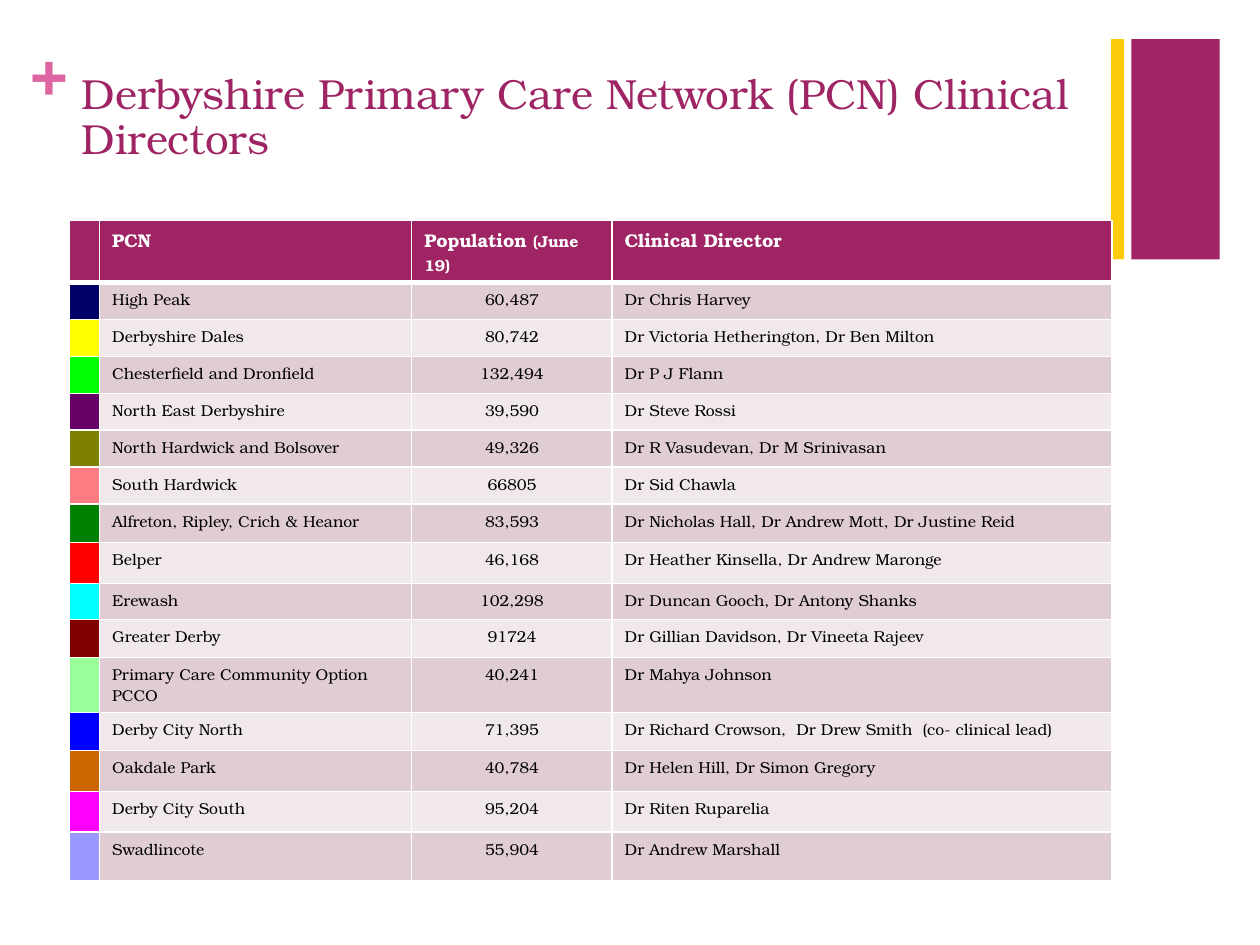
from lxml import etree
from pptx import Presentation, util as u
from pptx.dml.color import RGBColor
from pptx.enum import shapes, text
from pptx.oxml import ns

Pt = u.Pt
PLUM = RGBColor(0x9F, 0x24, 0x63)
PINK = RGBColor(0xDC, 0x65, 0xA2)
GOLD = RGBColor(0xFC, 0xCC, 0x0B)
WHITE = RGBColor(0xFF, 0xFF, 0xFF)
BLACK = RGBColor(0, 0, 0)
BANDS = (RGBColor(0xDF, 0xCD, 0xD3), RGBColor(0xF0, 0xE8, 0xEA))

HEADER = ("PCN", "Population ", "Clinical Director")
# swatch colour, network, population, directors, row height
NETWORKS = [
    ("000066", "High Peak", "60,487", "Dr Chris Harvey", 21.1),
    ("FFFF00", "Derbyshire Dales", "80,742", "Dr Victoria Hetherington, Dr Ben Milton", 21.1),
    ("00FF00", "Chesterfield and Dronfield", "132,494", "Dr P J Flann", 21.1),
    ("660066", "North East Derbyshire", "39,590", "Dr Steve Rossi", 21.1),
    ("808000", "North Hardwick and Bolsover", "49,326", "Dr R Vasudevan, Dr M Srinivasan", 21.1),
    ("FF7C80", "South Hardwick", "66805", "Dr Sid Chawla", 21.1),
    ("008000", "Alfreton, Ripley, Crich & Heanor", "83,593",
     "Dr Nicholas Hall, Dr Andrew Mott, Dr Justine Reid", 22),
    ("FF0000", "Belper", "46,168", "Dr Heather Kinsella, Dr Andrew Maronge", 23.4),
    ("00FFFF", "Erewash", "102,298", "Dr Duncan Gooch, Dr Antony Shanks", 20.6),
    ("800000", "Greater Derby", "91724", "Dr Gillian Davidson, Dr Vineeta Rajeev", 21.7),
    ("99FF99", "Primary Care Community Option PCCO", "40,241", "Dr Mahya Johnson", 31.4),
    ("0000FF", "Derby City North", "71,395",
     "Dr Richard Crowson,  Dr Drew Smith  (co- clinical lead)", 21.7),
    ("CC6600", "Oakdale Park", "40,784", "Dr Helen Hill, Dr Simon Gregory", 23.6),
    ("FF00FF", "Derby City South", "95,204", "Dr Riten Ruparelia", 23.2),
    ("9999FF", "Swadlincote", "55,904", "Dr Andrew Marshall", 27.6),
]
COLUMNS = (17.3, 178.4, 114.5, 285.7)
HEADER_HEIGHT = 35.5


class Deck:
    """Holds the style and the current slide."""
    font = "TeX Gyre Bonum"

    def __init__(self, prs):
        self.s = prs.slides.add_slide(prs.slide_layouts[6])

    def style(self, r, size, color, bold=False):
        r.font.name = self.font
        r.font.size = Pt(size)
        r.font.bold = bold
        r.font.color.rgb = color

    def bar(self, x, y, w, h, color):
        sp = self.s.shapes.add_shape(shapes.MSO_SHAPE.RECTANGLE, Pt(x), Pt(y), Pt(w), Pt(h))
        sp.shadow.inherit = False
        sp.fill.solid()
        sp.fill.fore_color.rgb = color
        sp.line.fill.background()

    def label(self, x, y, w, h, words, size, color, bold=False, inset=(0, 0), spacing=1.0):
        tf = self.s.shapes.add_textbox(Pt(x), Pt(y), Pt(w), Pt(h)).text_frame
        tf.word_wrap = True
        tf.vertical_anchor = text.MSO_ANCHOR.TOP
        tf.margin_left = tf.margin_right = Pt(inset[0])
        tf.margin_top = tf.margin_bottom = Pt(inset[1])
        tf.text = words
        p = tf.paragraphs[0]
        p.line_spacing = spacing
        self.style(p.runs[0], size, color, bold)

    def table(self, x, y, widths, heights):
        tbl = self.s.shapes.add_table(len(heights), len(widths), Pt(x), Pt(y),
                                      Pt(sum(widths)), Pt(sum(heights))).table
        for col, width in zip(tbl.columns, widths):
            col.width = Pt(width)
        for row, height in zip(tbl.rows, heights):
            row.height = Pt(height)
        return tbl

    def cell(self, c, fill, words="", size=9, color=BLACK, bold=False, centred=False,
             top=1, bottom=1):
        tcPr = c._tc.get_or_add_tcPr()
        for side, width in zip("LRTB", (1, 1, top, bottom)):
            ln = etree.SubElement(tcPr, ns.qn("a:ln" + side), w=str(Pt(width)))
            solid = etree.SubElement(ln, ns.qn("a:solidFill"))
            etree.SubElement(solid, ns.qn("a:srgbClr"), val=str(WHITE))
        c.fill.solid()
        c.fill.fore_color.rgb = fill
        p = c.text_frame.paragraphs[0]
        if words:
            p.text = words
            self.style(p.runs[0], size, color, bold)
        else:  # keeps an empty cell from stretching its row
            etree.SubElement(p._p, ns.qn("a:endParaRPr"), sz=str(size * 100))
        if centred:
            p.alignment = text.PP_ALIGN.CENTER
        return p


def main():
    prs = Presentation()
    prs.slide_width, prs.slide_height = Pt(720), Pt(540)
    deck = Deck(prs)

    # Corner decoration
    deck.bar(646.5, 22.3, 50.5, 126, PLUM)
    deck.label(17.3, 18, 21, 44, "+", 36, PINK, bold=True)
    deck.bar(635, 22.3, 7.4, 126, GOLD)

    # Title
    deck.label(39.6, 38.2, 594.7, 87.8, "Derbyshire Primary Care Network (PCN) Clinical Directors",
               24, PLUM, inset=(7.2, 3.6), spacing=0.9)

    # Table header
    heights = [HEADER_HEIGHT] + [network[-1] for network in NETWORKS]
    tbl = deck.table(39.6, 126, COLUMNS, heights)
    for col, words in enumerate(("",) + HEADER):
        p = deck.cell(tbl.cell(0, col), PLUM, words, 10.5 if words else 9, WHITE,
                      bold=True, bottom=3)
        if words == "Population ":
            r = p.add_run()
            r.text = "(June 19)"
            deck.style(r, 9, WHITE, bold=True)

    # Table body
    for row, (swatch, *words, _) in enumerate(NETWORKS, 1):
        top = 3 if row == 1 else 1
        deck.cell(tbl.cell(row, 0), RGBColor.from_string(swatch), top=top)
        for col, value in enumerate(words, 1):
            deck.cell(tbl.cell(row, col), BANDS[(row - 1) % 2], value,
                      centred=col == 2, top=top)

    prs.save("out.pptx")


if __name__ == "__main__":
    main()
